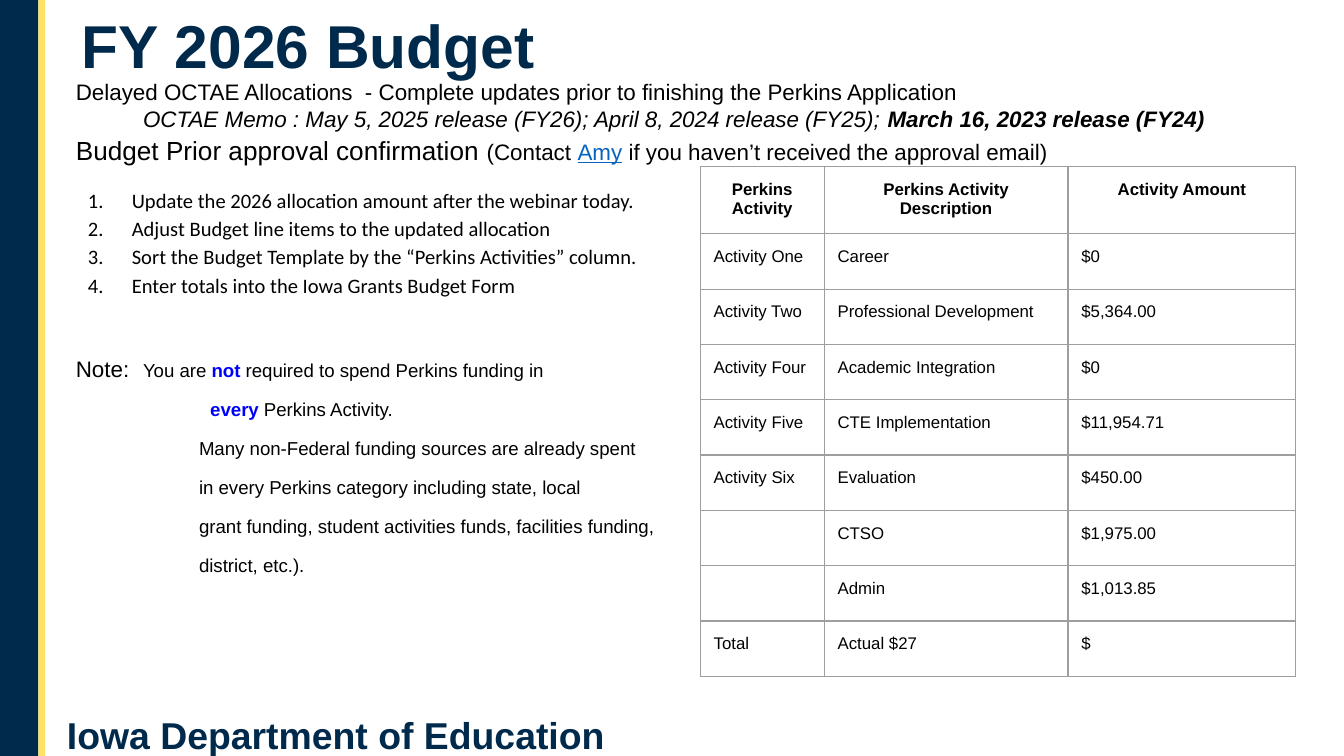
from pptx import Presentation
from pptx.dml.color import RGBColor
from pptx.enum.shapes import MSO_SHAPE as SHAPE
from pptx.enum.text import MSO_ANCHOR as ANCHOR, MSO_AUTO_SIZE as FIT, PP_ALIGN as ALIGN
from pptx.oxml.xmlchemy import OxmlElement as Element
from pptx.util import Pt

NAVY = RGBColor(0x00, 0x2A, 0x4B)
YELLOW = RGBColor(0xFD, 0xE2, 0x63)
BLACK = RGBColor(0x00, 0x00, 0x00)
BLUE = RGBColor(0x00, 0x00, 0xFF)
LINK = RGBColor(0x05, 0x63, 0xC1)
GRAY = RGBColor(0x9E, 0x9E, 0x9E)

STEPS = [
    "Update the 2026 allocation amount after the webinar today.",
    "Adjust Budget line items to the updated allocation",
    "Sort the Budget Template by the “Perkins Activities” column.",
    "Enter totals into the Iowa Grants Budget Form",
]
FUNDING = [
    "Many non-Federal funding sources are already spent",
    "in every Perkins category including state, local",
    "grant funding, student activities funds, facilities funding,",
    "district, etc.).",
]
ACTIVITIES = [
    ("Perkins Activity", "Perkins Activity Description", "Activity Amount"),
    ("Activity One", "Career", "$0"),
    ("Activity Two", "Professional Development", "$5,364.00"),
    ("Activity Four", "Academic Integration", "$0"),
    ("Activity Five", "CTE Implementation", "$11,954.71"),
    ("Activity Six", "Evaluation", "$450.00"),
    ("", "CTSO", "$1,975.00"),
    ("", "Admin", "$1,013.85"),
    ("Total", "Actual $27", "$"),
]


def set_all(obj, **values):
    """Set each named attribute on the object."""
    for name, value in values.items():
        setattr(obj, name, value)


def add_run(p, text, size, color=BLACK, font="Arial", **style):
    """Append a formatted run to the paragraph."""
    r = p.add_run()
    r.text = text
    set_all(r.font, size=Pt(size), name=font, **style)
    r.font.color.rgb = color


def place(sp, x, y, w, h):
    """Move a shape to the box, all in points."""
    set_all(sp, left=Pt(x), top=Pt(y), width=Pt(w), height=Pt(h))


def add_side_bars(s, x, y, w, h):
    """Draw the navy band and its yellow edge across the box."""
    edge = 3.6
    for left, width, color in ((x, w - edge, NAVY), (x + w - edge, edge, YELLOW)):
        sp = s.shapes.add_shape(SHAPE.RECTANGLE, Pt(left), Pt(y), Pt(width), Pt(h))
        sp.shadow.inherit = False
        sp.fill.solid()
        sp.fill.fore_color.rgb = color
        sp.line.fill.background()


def add_footer(s, x, y, w, h):
    """Write the department name in the box."""
    tf = s.shapes.add_textbox(Pt(x), Pt(y), Pt(w), Pt(h)).text_frame
    tf.word_wrap = True
    add_run(tf.paragraphs[0], "Iowa Department of Education", 20, NAVY, bold=True)


def fill_title(s, x, y, w, h):
    """Place and format the slide title."""
    sp = s.shapes.title
    place(sp, x, y, w, h)
    set_all(sp.text_frame, vertical_anchor=ANCHOR.MIDDLE, auto_size=FIT.NONE, word_wrap=True)
    p = sp.text_frame.paragraphs[0]
    set_all(p, alignment=ALIGN.LEFT, line_spacing=0.9)
    add_run(p, "FY 2026 Budget", 32.4, NAVY, bold=True)


def add_line(tf, margin, indent=0, before=0, spacing=1.0, numbered=False):
    """Start a paragraph with the given indents, spacing and numbering."""
    p = tf.paragraphs[0] if not tf.paragraphs[0].runs else tf.add_paragraph()
    set_all(p, alignment=ALIGN.LEFT, space_before=Pt(before), space_after=Pt(0), line_spacing=spacing)
    pPr = p._p.get_or_add_pPr()
    pPr.set("marL", str(Pt(margin)))
    pPr.set("indent", str(Pt(indent)))
    bullet = Element("a:buAutoNum" if numbered else "a:buNone")
    if numbered:
        bullet.set("type", "arabicPeriod")
    pPr.append(bullet)
    return p


def fill_body(s, x, y, w, h):
    """Write the allocation lines, numbered steps and note."""
    sp = s.placeholders[1]
    place(sp, x, y, w, h)
    tf = sp.text_frame
    set_all(tf, vertical_anchor=ANCHOR.TOP, auto_size=FIT.NONE, word_wrap=True)

    p = add_line(tf, 6)
    add_run(p, "Delayed OCTAE Allocations  - Complete updates prior to finishing the Perkins Application", 12)
    p = add_line(tf, 42)
    add_run(p, "OCTAE Memo : May 5, 2025 release (FY26); April 8, 2024 release (FY25); ", 12, italic=True)
    add_run(p, "March 16, 2023 release (FY24)", 12, italic=True, bold=True)
    p = add_line(tf, 6, before=1.2)
    add_run(p, "Budget Prior approval confirmation ", 14)
    add_run(p, "(Contact ", 12)
    add_run(p, "Amy", 12, LINK, underline=True)
    add_run(p, " if you haven’t received the approval email)", 12)

    for i, step in enumerate(STEPS):
        p = add_line(tf, 36, -23.5, before=0 if i else 10, spacing=1.15, numbered=True)
        add_run(p, step, 11, font="Calibri")

    p = add_line(tf, 6, before=32.4, spacing=0.9)
    add_run(p, "Note: \t", 12)
    add_run(p, "You are ", 10)
    add_run(p, "not", 10, BLUE, bold=True)
    add_run(p, " required to spend Perkins funding in", 10)
    p = add_line(tf, 78, before=10, spacing=0.9)
    add_run(p, "every", 10, BLUE, bold=True)
    add_run(p, " Perkins Activity.", 10)
    for text in FUNDING:
        p = add_line(tf, 42, 30, before=10, spacing=0.9)
        p.alignment = ALIGN.JUSTIFY
        add_run(p, text, 10)


def add_borders(cell):
    """Give the cell a thin gray line on all four sides."""
    tcPr = cell._tc.get_or_add_tcPr()
    for i, side in enumerate("LRTB"):
        ln = Element(f"a:ln{side}")
        ln.set("w", str(Pt(0.75)))
        fill = Element("a:solidFill")
        color = Element("a:srgbClr")
        color.set("val", str(GRAY))
        fill.append(color)
        ln.append(fill)
        tcPr.insert(i, ln)


def add_activity_table(s, x, y, w, h):
    """Build the table of Perkins activities and amounts in the box."""
    header = 35
    shares = (0.92, 1.81, 1.69)
    rows, cols = len(ACTIVITIES), len(shares)
    table = s.shapes.add_table(rows, cols, Pt(x), Pt(y), Pt(w), Pt(h)).table
    set_all(table, first_row=False, horz_banding=False)
    for col, share in zip(table.columns, shares):
        col.width = Pt(w * share / sum(shares))
    for i, values in enumerate(ACTIVITIES):
        table.rows[i].height = Pt((h - header) / (rows - 1) if i else header)
        for j, text in enumerate(values):
            cell = table.cell(i, j)
            cell.fill.background()
            add_borders(cell)
            if text:
                set_all(cell, **{f"margin_{e}": Pt(7.2) for e in ("left", "right", "top", "bottom")})
                p = cell.text_frame.paragraphs[0]
                p.alignment = ALIGN.LEFT if i else ALIGN.CENTER
                add_run(p, text, 9, bold=i == 0)


def main():
    """Build and save the budget slide."""
    prs = Presentation()
    set_all(prs, slide_width=Pt(720), slide_height=Pt(405))
    s = prs.slides.add_slide(prs.slide_layouts[1])
    add_side_bars(s, 0, 0, 24.2, 405)
    add_footer(s, 28.8, 378, 327, 24)
    fill_title(s, 36.7, 9.4, 633.6, 33.8)
    fill_body(s, 27.4, 38.2, 663.8, 332)
    add_activity_table(s, 375.1, 89.2, 319, 272)
    prs.save("out.pptx")


if __name__ == "__main__":
    main()
